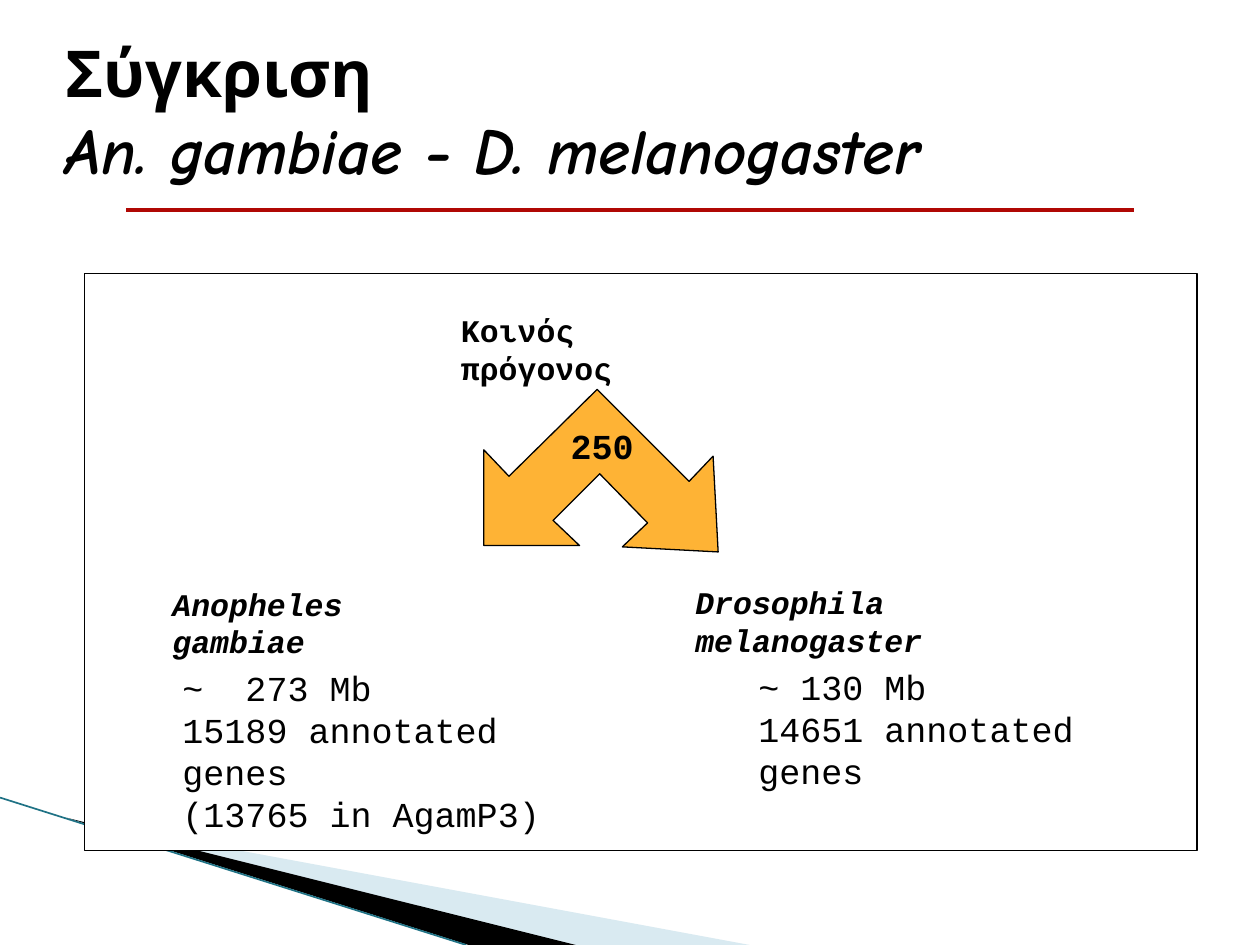
from pptx import Presentation
from pptx.dml.color import RGBColor
from pptx.enum.shapes import MSO_CONNECTOR as Connector, MSO_SHAPE as Shape
from pptx.enum.text import MSO_ANCHOR as Anchor, MSO_AUTO_SIZE as AutoSize, PP_ALIGN as Align
from pptx.oxml.ns import qn
from pptx.util import Inches, Pt
from lxml.etree import SubElement

COLORS = {
    "text": "000000",
    "panel": "FFFFFF",
    "arrow": "FEB335",
    "rule": "B00804",
    "wave": "A0CBDC",
    "edge": "1F7285",
}


class SlideBuilder:
    """Hold the slide and its style, and add each kind of element."""

    title_font = "Comic Neue"
    body_font = "Courier New"

    def __init__(self, slide):
        self.slide = slide

    def color(self, name):
        return RGBColor.from_string(COLORS[name])

    def paint(self, shape, fill, outlined=False, alpha=None):
        shape.shadow.inherit = False
        shape.fill.solid()
        shape.fill.fore_color.rgb = self.color(fill)
        if alpha is not None:
            color = shape.fill._xPr.find(qn("a:solidFill"))[0]
            SubElement(color, qn("a:alpha"), val=str(alpha * 1000))
        if outlined:
            shape.line.color.rgb = self.color("text")
            shape.line.width = Pt(0.75)
        else:
            shape.line.fill.background()

    def polygon(self, points, fill, **style):
        corners = [(Inches(x), Inches(y)) for x, y in points]
        builder = self.slide.shapes.build_freeform(*corners[0])
        builder.add_line_segments(corners[1:], close=True)
        self.paint(builder.convert_to_shape(), fill, **style)

    def panel(self, left, top, width, height):
        shape = self.slide.shapes.add_shape(
            Shape.RECTANGLE, Inches(left), Inches(top), Inches(width), Inches(height))
        self.paint(shape, "panel", outlined=True)

    def line(self, start, end, color, width):
        connector = self.slide.shapes.add_connector(
            Connector.STRAIGHT, *(Inches(value) for value in start + end))
        connector.line.color.rgb = self.color(color)
        connector.line.width = Pt(width)
        SubElement(connector._element.spPr, qn("a:effectLst"))

    def add_run(self, paragraph, text, font, size, bold=False, italic=False):
        run = paragraph.add_run()
        run.text = text
        run.font.name = font
        run.font.size = Pt(size)
        run.font.bold = bold
        run.font.italic = italic
        run.font.color.rgb = self.color("text")

    def title(self, left, top, width, height, heading, species):
        shape = self.slide.shapes.title
        shape.left, shape.top = Inches(left), Inches(top)
        shape.width, shape.height = Inches(width), Inches(height)
        frame = shape.text_frame
        frame.auto_size = AutoSize.NONE
        frame.vertical_anchor = Anchor.MIDDLE
        paragraph = frame.paragraphs[0]
        paragraph.alignment = Align.LEFT
        self.add_run(paragraph, heading, self.title_font, 36.9, bold=True)
        paragraph.add_line_break()
        self.add_run(paragraph, species, self.title_font, 36.9, bold=True, italic=True)

    def text(self, left, top, width, height, lines, size, **style):
        box = self.slide.shapes.add_textbox(
            Inches(left), Inches(top), Inches(width), Inches(height))
        frame = box.text_frame
        frame.word_wrap = True
        for index, line in enumerate(lines):
            paragraph = frame.add_paragraph() if index else frame.paragraphs[0]
            self.add_run(paragraph, line, self.body_font, size, **style)


def main():
    presentation = Presentation()
    presentation.slide_width, presentation.slide_height = Inches(10), Inches(7.5)
    builder = SlideBuilder(presentation.slides.add_slide(presentation.slide_layouts[5]))

    builder.polygon([(0.55, 6.5), (5.95, 7.5), (4.56, 7.5)], "wave", alpha=40)
    builder.polygon([(0.53, 6.49), (4.57, 7.5), (3.72, 7.5)], "text")
    builder.line((0, 6.33), (3.7, 7.5), "edge", 0.95)
    builder.panel(0.67, 2.17, 8.83, 4.58)
    builder.title(0.42, 0.25, 9.17, 1.25, "Σύγκριση", "An. gambiae - D. melanogaster")
    builder.line((1, 1.67), (9, 1.67), "rule", 2.25)

    builder.text(3.56, 2.42, 2.39, 0.4, ["Κοινός πρόγονος"], 18, bold=True)
    builder.polygon(
        [(3.84, 4.33), (4.6, 4.33), (4.39, 4.13), (4.76, 3.76), (5.14, 4.15), (4.94, 4.34),
         (5.7, 4.38), (5.66, 3.62), (5.47, 3.82), (4.74, 3.09), (4.04, 3.78), (3.84, 3.57)],
        "arrow", outlined=True)
    builder.text(4.43, 3.32, 0.82, 0.44, ["250"], 20, bold=True)

    builder.text(1.27, 4.59, 2.61, 0.4, ["Anopheles gambiae"], 18, bold=True, italic=True)
    builder.text(5.42, 4.58, 3.29, 0.4, ["Drosophila melanogaster"], 18, bold=True, italic=True)
    builder.text(1.35, 5.24, 3.44, 1.11,
                 ["~  273 Mb", "15189 annotated genes", "(13765 in AgamP3)"], 20)
    builder.text(5.92, 5.23, 3.44, 0.77, ["~ 130 Mb", "14651 annotated genes"], 20)
    presentation.save("out.pptx")


if __name__ == "__main__":
    main()
